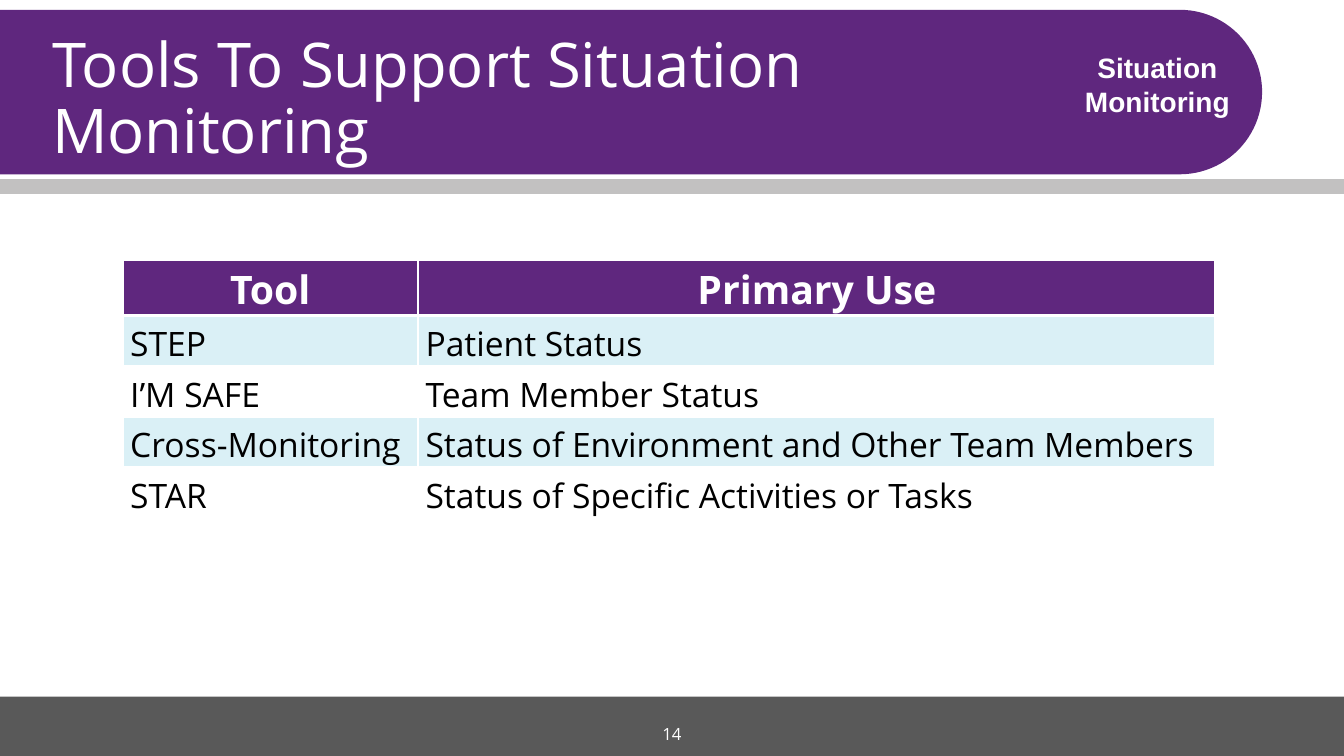
import pptx
import pptx.dml.color
import pptx.enum.shapes
import pptx.enum.text
import pptx.oxml
import pptx.oxml.ns
import pptx.util

Pt = pptx.util.Pt
SHAPE = pptx.enum.shapes.MSO_SHAPE
ALIGN = pptx.enum.text.PP_ALIGN
ANCHOR = pptx.enum.text.MSO_ANCHOR
PURPLE, WHITE, BLACK, PALE_BLUE = "5F277E", "FFFFFF", "000000", "DAF0F6"


def rgb(color):
    return pptx.dml.color.RGBColor.from_string(color)


def write(tf, text, size, color=WHITE, font="Open Sans", bold=False,
          align=ALIGN.LEFT, anchor=ANCHOR.MIDDLE, line_spacing=None):
    tf.word_wrap = True
    tf.vertical_anchor = anchor
    p = tf.paragraphs[0]
    p.text = text
    p.alignment = align
    p.line_spacing = line_spacing
    for r in p.runs:
        r.font.size = Pt(size)
        r.font.name = font
        r.font.bold = bold
        r.font.color.rgb = rgb(color)


prs = pptx.Presentation()
prs.slide_width, prs.slide_height = Pt(960), Pt(540)
s = prs.slides.add_slide(prs.slide_layouts[5])

# Footer bar, title band (turned so its round end faces right) and grey rule
bands = [
    (SHAPE.RECTANGLE, 0, 497.5, 960, 42.5, "595959", 0),
    (SHAPE.ROUND_2_SAME_RECTANGLE, 392, -385, 117.5, 901.5, PURPLE, 90),
    (SHAPE.RECTANGLE, 0, 128, 960, 10.5, "C2C1C1", 0),
]
for kind, left, top, width, height, color, rotation in bands:
    sp = s.shapes.add_shape(kind, Pt(left), Pt(top), Pt(width), Pt(height))
    sp.shadow.inherit = False
    sp.fill.solid()
    sp.fill.fore_color.rgb = rgb(color)
    sp.line.fill.background()
    sp.rotation = rotation
    if kind == SHAPE.ROUND_2_SAME_RECTANGLE:
        sp.adjustments[0] = 0.5

# Title, brought in front of the bands
title = s.shapes.title
title.left, title.top, title.width, title.height = Pt(30), Pt(19.5), Pt(829.5), Pt(104.5)
write(title.text_frame, "Tools To Support Situation\vMonitoring", 44, line_spacing=0.9)
s.shapes._spTree.append(title._element)

module = s.shapes.add_textbox(Pt(741.5), Pt(32.5), Pt(170.5), Pt(55.5))
write(module.text_frame, "Situation Monitoring", 20, font="Arial", bold=True,
      align=ALIGN.CENTER, anchor=ANCHOR.TOP)

# Table
rows = [
    ("Tool", "Primary Use"),
    ("STEP", "Patient Status"),
    ("I’M SAFE", "Team Member Status"),
    ("Cross-Monitoring", "Status of Environment and Other Team Members"),
    ("STAR", "Status of Specific Activities or Tasks"),
]
table = s.shapes.add_table(len(rows), 2, Pt(87.5), Pt(185.5), Pt(781), Pt(185)).table
for column, width in zip(table.columns, (211, 570)):
    column.width = Pt(width)
for i, row in enumerate(rows):
    header = i == 0
    table.rows[i].height = Pt(40 if header else 36.25)
    for j, text in enumerate(row):
        cell = table.cell(i, j)
        tcPr = cell._tc.get_or_add_tcPr()
        for side in ("lnL", "lnR", "lnT", "lnB"):
            tcPr.append(pptx.oxml.parse_xml(
                f'<a:{side} {pptx.oxml.ns.nsdecls("a")} w="{Pt(2.25)}"><a:solidFill>'
                f'<a:srgbClr val="{WHITE}"/></a:solidFill></a:{side}>'))
        cell.fill.solid()
        cell.fill.fore_color.rgb = rgb(PURPLE if header else PALE_BLUE if i % 2 else WHITE)
        cell.margin_left = cell.margin_right = Pt(5.5)
        cell.margin_top = cell.margin_bottom = Pt(0)
        cell.vertical_anchor = ANCHOR.BOTTOM
        write(cell.text_frame, text, 28 if header else 24, WHITE if header else BLACK,
              bold=header, align=ALIGN.CENTER if header else ALIGN.LEFT,
              anchor=None)

number = s.shapes.add_textbox(Pt(410.5), Pt(510), Pt(139), Pt(28.5))
write(number.text_frame, "14", 12, align=ALIGN.CENTER)

prs.save("out.pptx")
